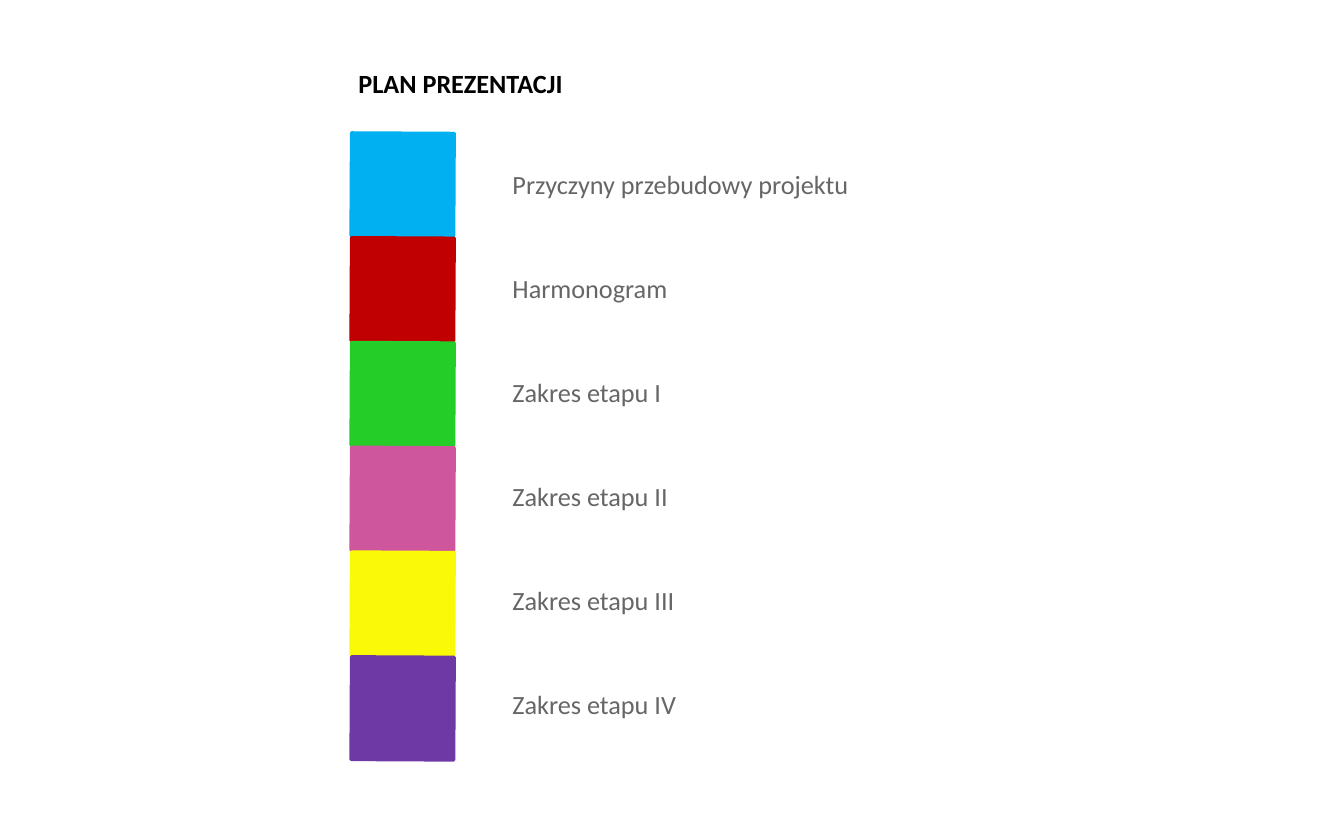
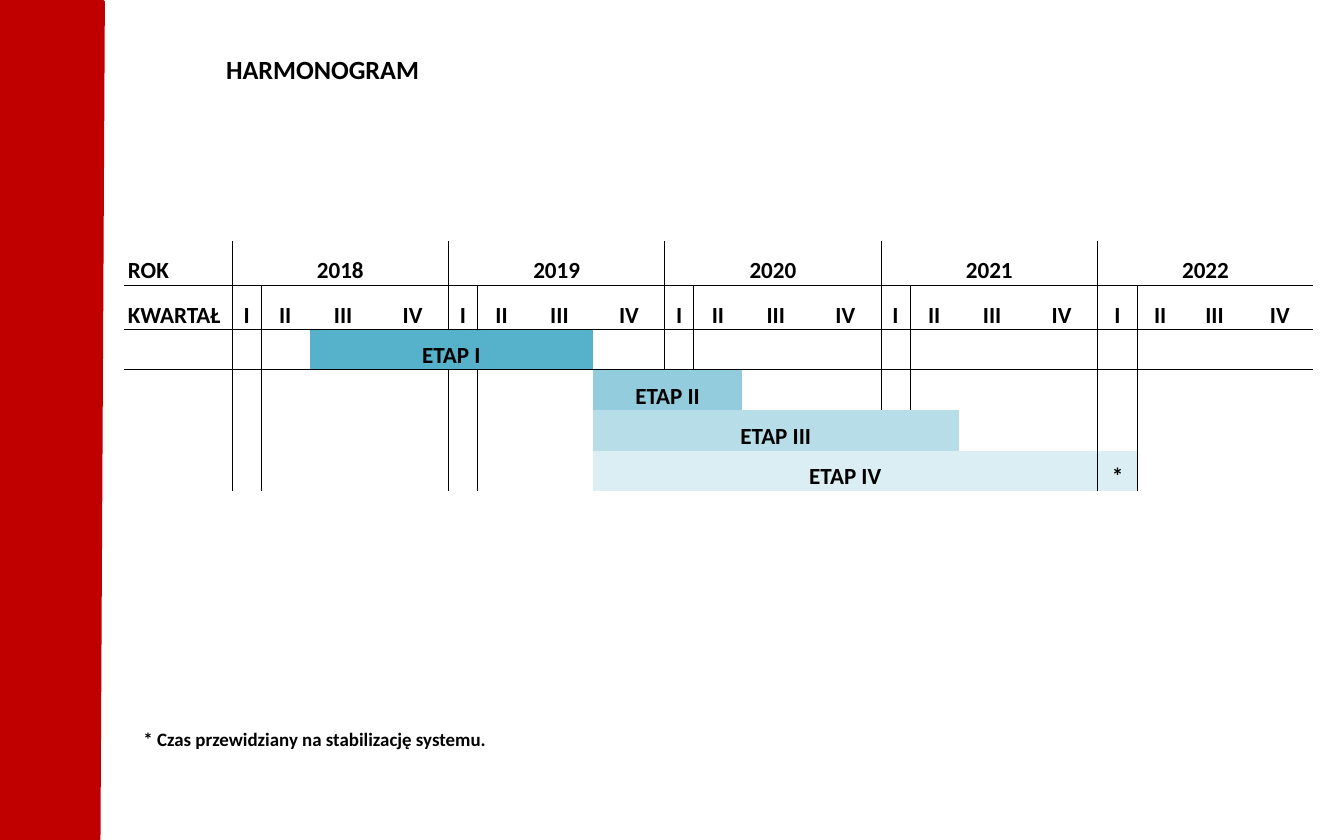
from lxml.etree import SubElement
from pptx import Presentation
from pptx.dml.color import RGBColor
from pptx.enum.shapes import MSO_SHAPE
from pptx.enum.text import MSO_ANCHOR, MSO_AUTO_SIZE, PP_ALIGN
from pptx.oxml.ns import qn
from pptx.util import Cm, Pt

COLORS = {
    "text": "000000",
    "label": "666666",
    "reasons": "00B0F0",
    "schedule": "C00000",
    "stage1": "25CD29",
    "stage2": "CE569D",
    "stage3": "FAFA06",
    "stage4": "6F39A5",
    "bar1": "56B1CA",
    "bar2": "93CDDD",
    "bar3": "B7DEE8",
    "bar4": "DBEEF4",
}
FONT = "Calibri"
TILT = 0.3
BAND_WIDTH = 3.46
NO_GRID_STYLE = "{2D5ABB26-0587-4C30-8999-92F81FD0307C}"

TOPICS = [
    ("Przyczyny przebudowy projektu", "reasons"),
    ("Harmonogram", "schedule"),
    ("Zakres etapu I", "stage1"),
    ("Zakres etapu II", "stage2"),
    ("Zakres etapu III", "stage3"),
    ("Zakres etapu IV", "stage4"),
]
YEARS = ["2018", "2019", "2020", "2021", "2022"]
QUARTERS = ["I", "II", "III", "IV"]
YEAR_ENDS = [0, 4, 8, 12, 16]
QUARTER_WIDTHS = [0.97, 1.63, 2.26, 2.41]
LAST_YEAR_WIDTHS = [1.35, 1.52, 2.13, 2.26]
STAGES = [
    (2, 3, 7, "ETAP I", "bar1"),
    (3, 8, 10, "ETAP II", "bar2"),
    (4, 8, 14, "ETAP III", "bar3"),
    (5, 8, 16, "ETAP IV", "bar4"),
    (5, 17, 17, "*", "bar4"),
]


def color(name):
    return RGBColor.from_string(COLORS[name])


def style_text(paragraph, size, tone="text", bold=True, align=PP_ALIGN.LEFT):
    paragraph.alignment = align
    font = paragraph.font
    font.name, font.size, font.bold = FONT, Pt(size), bold
    font.color.rgb = color(tone)


def place(shape, left, top, width, height):
    shape.left, shape.top = Cm(left), Cm(top)
    shape.width, shape.height = Cm(width), Cm(height)


def prepare_frame(shape):
    frame = shape.text_frame
    frame.word_wrap = True
    frame.auto_size = MSO_AUTO_SIZE.NONE
    frame.vertical_anchor = MSO_ANCHOR.TOP
    return frame


def add_title(slide, text, left, top):
    title = slide.shapes.title
    place(title, left, top, 10, 1.32)
    frame = prepare_frame(title)
    frame.text = text
    style_text(frame.paragraphs[0], 25)


def add_block(slide, fill, left, top, width, height):
    block = slide.shapes.add_shape(
        MSO_SHAPE.RECTANGLE, Cm(left), Cm(top), Cm(width), Cm(height))
    block.rotation = TILT
    block.shadow.inherit = False
    block.fill.solid()
    block.fill.fore_color.rgb = color(fill)
    block.line.color.rgb = color(fill)
    block.line.width = Pt(2.89)


def add_topics(slide, left, top, pitch):
    for index, (_, fill) in enumerate(TOPICS):
        add_block(slide, fill, left, top + index * pitch, BAND_WIDTH, BAND_WIDTH)

    labels = slide.placeholders[1]
    place(labels, left + 5.37, top + 1.07, 19.5, len(TOPICS) * pitch)
    frame = prepare_frame(labels)
    frame.margin_left = frame.margin_right = Cm(0.05)
    frame.text = "\n".join(label for label, _ in TOPICS)
    for paragraph in frame.paragraphs:
        properties = paragraph._p.get_or_add_pPr()
        properties.set("marL", "0")
        properties.set("indent", "0")
        SubElement(properties, qn("a:buNone"))
        paragraph.space_before = Pt(0)
        paragraph.space_after = Pt(69)
        style_text(paragraph, 25, "label", bold=False)


def add_border(cell, side):
    line = SubElement(cell._tc.get_or_add_tcPr(), qn("a:ln" + side), w=str(Pt(1)))
    fill = SubElement(line, qn("a:solidFill"))
    SubElement(fill, qn("a:srgbClr"), val=COLORS["text"])


def draw_borders(cell, row, first):
    last = first + cell.span_width - 1
    sides = {
        "L": first - 1 in YEAR_ENDS,
        "R": last in YEAR_ENDS,
        "T": row in (1, 2),
        "B": row in (0, 1),
    }
    for side, shown in sides.items():
        if shown:
            add_border(cell, side)


def schedule_entries():
    entries = [(0, 0, 0, "ROK", None), (1, 0, 0, "KWARTAŁ", None)]
    for year, end in zip(YEARS, YEAR_ENDS):
        entries.append((0, end + 1, end + 4, year, None))
        for offset, quarter in enumerate(QUARTERS, 1):
            entries.append((1, end + offset, end + offset, quarter, None))
    return entries + STAGES


def add_schedule(slide, left, top):
    widths = [3.63] + QUARTER_WIDTHS * 4 + LAST_YEAR_WIDTHS
    heights = [1.48] * 2 + [1.36] * 4
    frame = slide.shapes.add_table(
        len(heights), len(widths), Cm(left), Cm(top), Cm(sum(widths)), Cm(sum(heights)))
    table = frame.table
    table.first_row = table.horz_banding = False
    table._tbl.tblPr.find(qn("a:tableStyleId")).text = NO_GRID_STYLE
    for column, width in zip(table.columns, widths):
        column.width = Cm(width)
    for row, height in zip(table.rows, heights):
        row.height = Cm(height)

    fills = {}
    for row, first, last, text, fill in schedule_entries():
        cell = table.cell(row, first)
        if last > first:
            cell.merge(table.cell(row, last))
        cell.text = text
        paragraph = cell.text_frame.paragraphs[0]
        paragraph.line_spacing = 1.15
        style_text(paragraph, 22, align=PP_ALIGN.CENTER if first else PP_ALIGN.LEFT)
        fills[row, first] = fill

    for row in range(len(heights)):
        for first in range(len(widths)):
            cell = table.cell(row, first)
            if cell.is_spanned:
                continue
            cell.vertical_anchor = MSO_ANCHOR.BOTTOM
            cell.margin_left = cell.margin_right = Cm(0.13)
            cell.margin_top = cell.margin_bottom = 0
            draw_borders(cell, row, first)
            fill = fills.get((row, first))
            if fill:
                cell.fill.solid()
                cell.fill.fore_color.rgb = color(fill)
            else:
                cell.fill.background()


def add_footnote(slide, text, left, top):
    footnote = slide.shapes.add_textbox(Cm(left), Cm(top), Cm(24.6), Cm(1.02))
    frame = prepare_frame(footnote)
    frame.text = text
    style_text(frame.paragraphs[0], 18)


def build_plan(deck):
    slide = deck.slides.add_slide(deck.slide_layouts[1])
    add_title(slide, "PLAN PREZENTACJI", 11.79, 2.13)
    add_topics(slide, left=11.8, top=4.47, pitch=3.52)


def build_schedule(deck):
    slide = deck.slides.add_slide(deck.slide_layouts[5])
    add_title(slide, "HARMONOGRAM", 7.34, 1.65)
    add_block(slide, "schedule", -0.06, 0.04, BAND_WIDTH, 28.17)
    add_schedule(slide, left=4.17, top=8.1)
    add_footnote(slide, "* Czas przewidziany na stabilizację systemu.", 4.57, 24.31)


def main():
    deck = Presentation()
    deck.slide_width, deck.slide_height = Cm(45.16), Cm(28.22)
    build_plan(deck)
    build_schedule(deck)
    deck.save("out.pptx")


if __name__ == "__main__":
    main()
